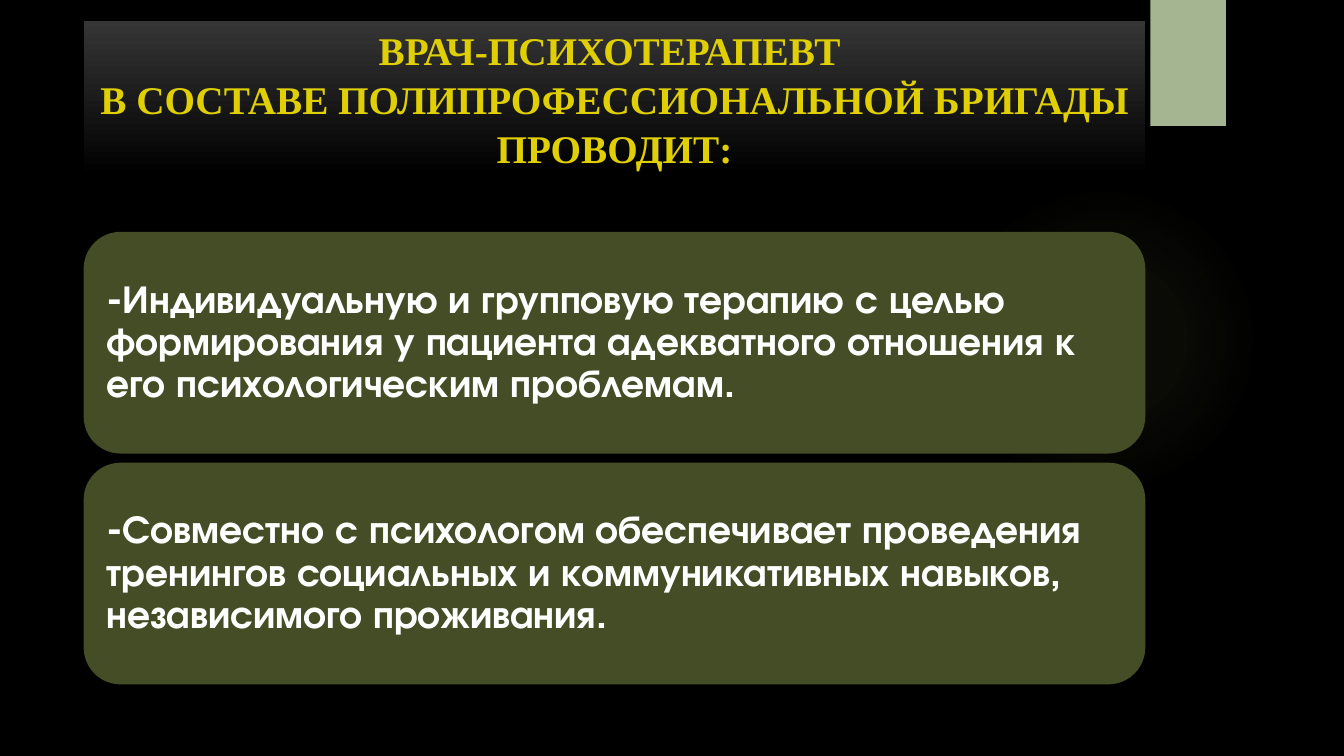
from lxml import etree
from pptx import Presentation
from pptx.dml.color import RGBColor
from pptx.enum import shapes, text
from pptx.oxml import ns
from pptx.util import Inches, Pt

TITLE = "ВРАЧ-ПСИХОТЕРАПЕВТ \vВ СОСТАВЕ ПОЛИПРОФЕССИОНАЛЬНОЙ БРИГАДЫ ПРОВОДИТ:"
DUTIES = [
    "-Индивидуальную и групповую терапию с целью формирования у пациента "
    "адекватного отношения к его психологическим проблемам.",
    "-Совместно с психологом обеспечивает проведения тренингов социальных и "
    "коммуникативных навыков, независимого проживания.",
]
COLORS = {
    "background": "000000", "glow": "9EB160", "tab": "A5B592", "band": "353535",
    "title": "DFCF04", "card": "444D26", "card_text": "FFFFFF",
}
GLOW_STOPS = [(0, 7), (36, 6), (69, 0)]  # position and opacity, percent

LEFT, WIDTH = 0.83, 10.53
CARD_TOP, CARD_HEIGHT, CARD_GAP = 2.3, 2.2, 0.09


def color(name):
    return RGBColor.from_string(COLORS[name])


def add_block(slide, kind, left, top, width, height, fill):
    shape = slide.shapes.add_shape(kind, *map(Inches, (left, top, width, height)))
    shape.shadow.inherit = False
    shape.line.fill.background()
    shape.fill.solid()
    shape.fill.fore_color.rgb = color(fill)
    return shape


def write(shape, content, font_name, font_color, align, spacing):
    frame = shape.text_frame
    frame.word_wrap = True
    frame.vertical_anchor = text.MSO_ANCHOR.MIDDLE
    frame.text = content
    paragraph = frame.paragraphs[0]
    paragraph.alignment = align
    paragraph.line_spacing = spacing
    for run in paragraph.runs:
        run.font.name = font_name
        run.font.size = Pt(28)
        run.font.bold = True
        run.font.color.rgb = color(font_color)
    return frame


def fade_from_center(shape):
    stops = "".join(
        f'<a:gs pos="{position * 1000}"><a:srgbClr val="{COLORS["glow"]}">'
        f'<a:alpha val="{opacity * 1000}"/></a:srgbClr></a:gs>'
        for position, opacity in GLOW_STOPS
    )
    gradient = etree.fromstring(
        f'<a:gradFill {ns.nsdecls("a")}><a:gsLst>{stops}</a:gsLst><a:path path="circle">'
        '<a:fillToRect l="50000" t="50000" r="50000" b="50000"/></a:path></a:gradFill>'
    )
    properties = shape.element.spPr
    properties.replace(properties.find(ns.qn("a:solidFill")), gradient)


presentation = Presentation()
presentation.slide_width, presentation.slide_height = Inches(13.33), Inches(7.5)
slide = presentation.slides.add_slide(presentation.slide_layouts[6])
slide.background.fill.solid()
slide.background.fill.fore_color.rgb = color("background")
kinds = shapes.MSO_SHAPE

# Backdrop: soft glow and corner tab
fade_from_center(add_block(slide, kinds.OVAL, 9.41, 1.83, 3.08, 3.08, "glow"))
add_block(slide, kinds.RECTANGLE, 11.41, 0, 0.75, 1.25, "tab")

# Title band, fading downwards
band = add_block(slide, kinds.RECTANGLE, LEFT, 0.21, WIDTH, 1.53, "band")
band.fill.gradient()
band.fill.gradient_angle = 270
for stop, name, position in zip(band.fill.gradient_stops, ("band", "background"), (0, 1)):
    stop.color.rgb = color(name)
    stop.position = position
write(band, TITLE, "Times New Roman", "title", text.PP_ALIGN.CENTER, 1.04)

# Duty cards
for index, duty in enumerate(DUTIES):
    top = CARD_TOP + index * (CARD_HEIGHT + CARD_GAP)
    card = add_block(slide, kinds.ROUNDED_RECTANGLE, LEFT, top, WIDTH, CARD_HEIGHT, "card")
    frame = write(card, duty, "TeX Gyre Adventor", "card_text", text.PP_ALIGN.LEFT, 0.9)
    frame.margin_left = frame.margin_right = Inches(0.12)
    frame.margin_top = frame.margin_bottom = Inches(0.12)

presentation.save("out.pptx")
